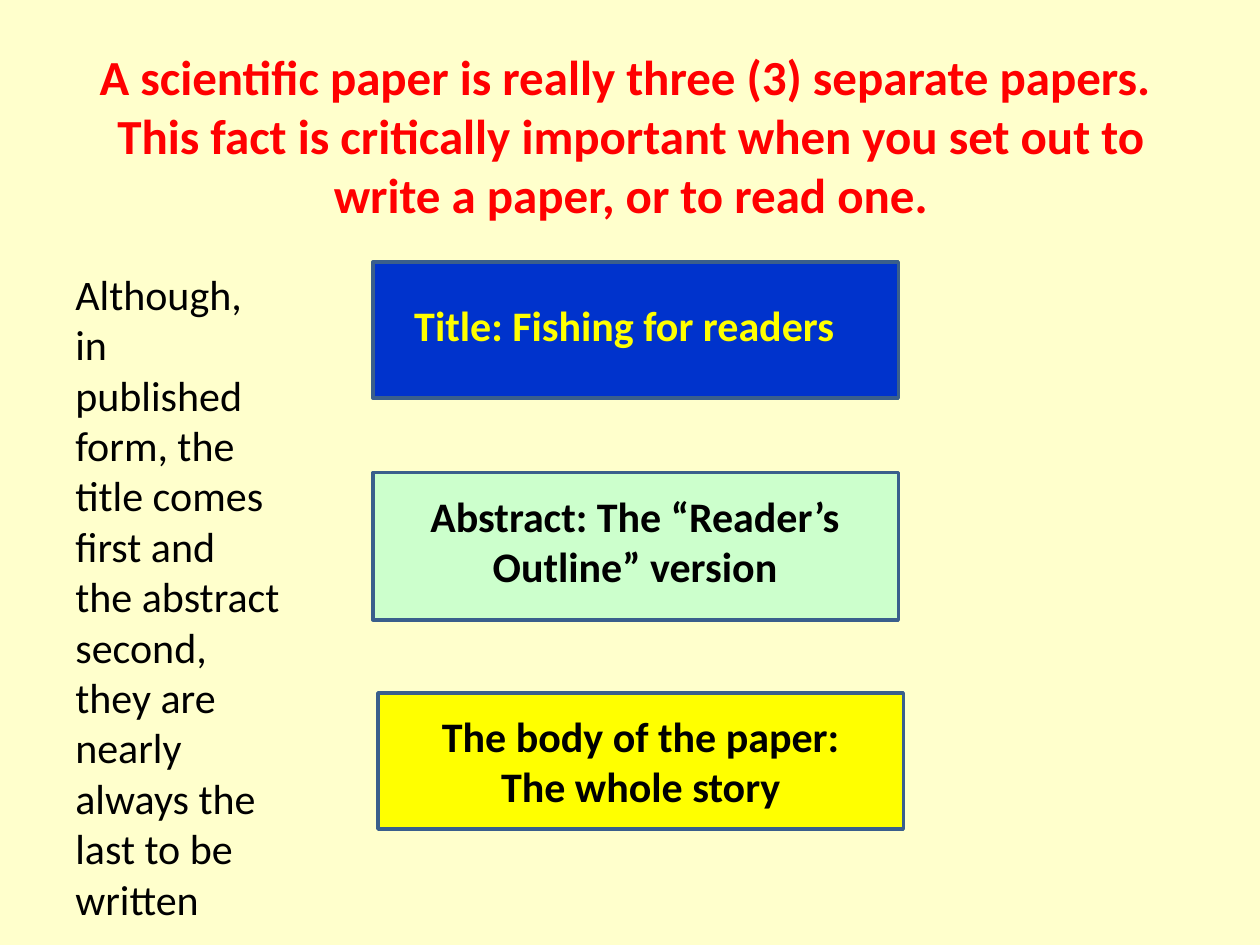
from pptx import Presentation
from pptx.dml.color import RGBColor
from pptx.enum.shapes import MSO_SHAPE
from pptx.enum.text import MSO_AUTO_SIZE, PP_ALIGN
from pptx.util import Inches, Pt

RECTANGLE = MSO_SHAPE.RECTANGLE
GROW = MSO_AUTO_SIZE.SHAPE_TO_FIT_TEXT
LEFT, CENTER = PP_ALIGN.LEFT, PP_ALIGN.CENTER

CREAM = RGBColor(0xFF, 0xFF, 0xCC)
BLUE = RGBColor(0x00, 0x33, 0xCC)
MINT = RGBColor(0xCC, 0xFF, 0xCC)
YELLOW = RGBColor(0xFF, 0xFF, 0x00)
OUTLINE = RGBColor(0x3A, 0x5F, 0x8C)
RED = RGBColor(0xFF, 0x00, 0x00)
BLACK = RGBColor(0x00, 0x00, 0x00)

HEADING = ("A scientific paper is really three (3) separate papers.  This fact is "
           "critically important when you set out to write a paper, or to read one.")
REMARK = ("Although, in published form, the title comes first and the abstract "
          "second, they are nearly always the last to be written")

# Panel box, fill, label box, label text, label colour
PANELS = [
    ((2.96, 2.08, 4.17, 1.08), BLUE,
     (2.33, 2.33, 5.25, 0.5), "Title: Fishing for readers", YELLOW),
    ((2.96, 3.75, 4.17, 1.17), MINT,
     (3.25, 3.84, 3.58, 0.91), "Abstract: The “Reader’s Outline” version", BLACK),
    ((3, 5.5, 4.17, 1.08), YELLOW,
     (3.25, 5.59, 3.67, 0.91), "The body of the paper: The whole story", BLACK),
]


def add_text(page, box, text, color, size=24, bold=True, align=CENTER):
    """Place one wrapped paragraph in the given box."""
    frame = page.shapes.add_textbox(*map(Inches, box)).text_frame
    frame.word_wrap = True
    frame.auto_size = GROW
    para = frame.paragraphs[0]
    para.alignment = align
    span = para.add_run()
    span.text = text
    formats = {"name": "Calibri", "size": Pt(size), "bold": bold}
    for attribute, value in formats.items():
        setattr(span.font, attribute, value)
    span.font.color.rgb = color


def add_panel(page, box, fill, label_box, label, label_color):
    """Place an outlined rectangle and its label."""
    panel = page.shapes.add_shape(RECTANGLE, *map(Inches, box))
    panel.shadow.inherit = False
    panel.fill.solid()
    panel.fill.fore_color.rgb = fill
    panel.line.color.rgb = OUTLINE
    panel.line.width = Pt(2)
    add_text(page, label_box, label, label_color)


def main():
    deck = Presentation()
    deck.slide_width, deck.slide_height = Inches(10), Inches(7.5)
    page = deck.slides.add_slide(deck.slide_layouts[6])
    page.background.fill.solid()
    page.background.fill.fore_color.rgb = CREAM

    # Three parts of a paper
    for panel in PANELS:
        add_panel(page, *panel)

    # Heading and side remark
    add_text(page, (0.67, 0.32, 8.67, 1.51), HEADING, RED, size=28)
    add_text(page, (0.5, 2.08, 1.83, 5.65), REMARK, BLACK, bold=False, align=LEFT)

    deck.save("out.pptx")


if __name__ == "__main__":
    main()
